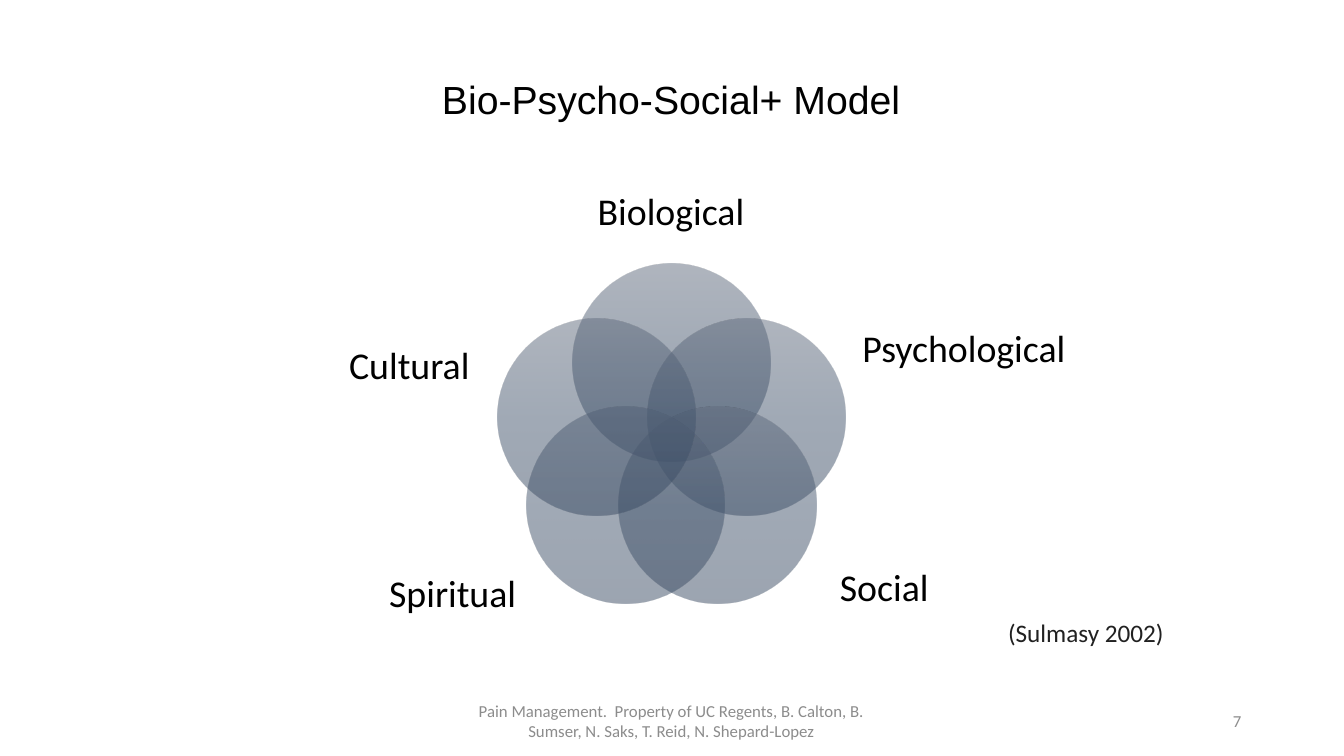
"""Build the Bio-Psycho-Social+ Model slide: a ring of five see-through circles."""
from copy import deepcopy
from math import cos, radians, sin

from lxml.etree import SubElement
from pptx import Presentation
from pptx.dml.color import RGBColor
from pptx.enum.shapes import MSO_SHAPE
from pptx.enum.text import MSO_ANCHOR, PP_ALIGN
from pptx.oxml.ns import qn
from pptx.util import Inches, Pt


def tint(color, code):
    color.rgb = RGBColor.from_string(code)


def write(shape, text, size, code, font="Calibri", align=PP_ALIGN.CENTER,
          anchor=MSO_ANCHOR.MIDDLE, wrap=True):
    frame = shape.text_frame
    frame.word_wrap = wrap
    frame.vertical_anchor = anchor
    line = frame.paragraphs[0]
    line.alignment = align
    run = line.add_run()
    run.text = text
    run.font.size = Pt(size)
    run.font.name = font
    tint(run.font.color, code)
    return frame


deck = Presentation()
deck.slide_width, deck.slide_height = Inches(13.33), Inches(7.5)
slide = deck.slides.add_slide(deck.slide_layouts[5])
shapes = slide.shapes

title = shapes.title
title.left, title.top = Inches(3.07), Inches(0.7)
title.width, title.height = Inches(7.17), Inches(0.57)
write(title, "Bio-Psycho-Social+ Model", 28, "000000", "Arial",
      anchor=MSO_ANCHOR.TOP)

MID_X, MID_Y, RING, SIZE = 6.66, 4.38, 0.78, 1.96
STOPS = [(0, "606B7D"), (0.5, "42546C"), (1, "394A62")]
LABELS = [
    ("Biological", (5.52, 1.46, 2.27, 1.32)),
    ("Psychological", (8.54, 2.76, 2.04, 1.43)),
    ("Social", (7.75, 5.13, 2.04, 1.43)),
    ("Spiritual", (3.47, 5.19, 2.04, 1.43)),
    ("Cultural", (3.04, 2.93, 2.04, 1.43)),
]

for step, (name, box) in enumerate(LABELS):
    turn = radians(step * 360 / len(LABELS))
    left = MID_X + RING * sin(turn) - SIZE / 2
    top = MID_Y - RING * cos(turn) - SIZE / 2
    disc = shapes.add_shape(MSO_SHAPE.OVAL, Inches(left), Inches(top),
                            Inches(SIZE), Inches(SIZE))
    disc.element.remove(disc.element.txBody)
    disc.shadow.inherit = False
    disc.line.fill.background()
    disc.fill.gradient()
    disc.fill.gradient_angle = 270
    first = disc.element.spPr.find(".//" + qn("a:gs"))
    first.addnext(deepcopy(first))
    for stop, (place, code) in zip(disc.fill.gradient_stops, STOPS):
        stop.position = place
        tint(stop.color, code)
    for color in disc.element.spPr.iter(qn("a:srgbClr")):
        SubElement(color, qn("a:alpha")).set("val", "50000")

    label = shapes.add_textbox(*map(Inches, box))
    frame = write(label, name, 27, "000000")
    frame.margin_left = frame.margin_right = 0
    frame.margin_top = frame.margin_bottom = 0
    frame.paragraphs[0].line_spacing = 0.9

NOTES = [
    ((9.41, 6.95, 3, 0.4), "7", 12, "8C8C8C", PP_ALIGN.RIGHT, True),
    ((4.41, 6.95, 4.5, 0.4),
     "Pain Management.  Property of UC Regents, B. Calton, B. Sumser, "
     "N. Saks, T. Reid, N. Shepard-Lopez",
     12, "8C8C8C", PP_ALIGN.CENTER, True),
    ((9.9, 6.07, 1.76, 0.4), "(Sulmasy 2002)", 18, "212121", PP_ALIGN.LEFT, False),
]
for box, text, size, code, align, wrap in NOTES:
    write(shapes.add_textbox(*map(Inches, box)), text, size, code,
          align=align, wrap=wrap)

deck.save("out.pptx")
